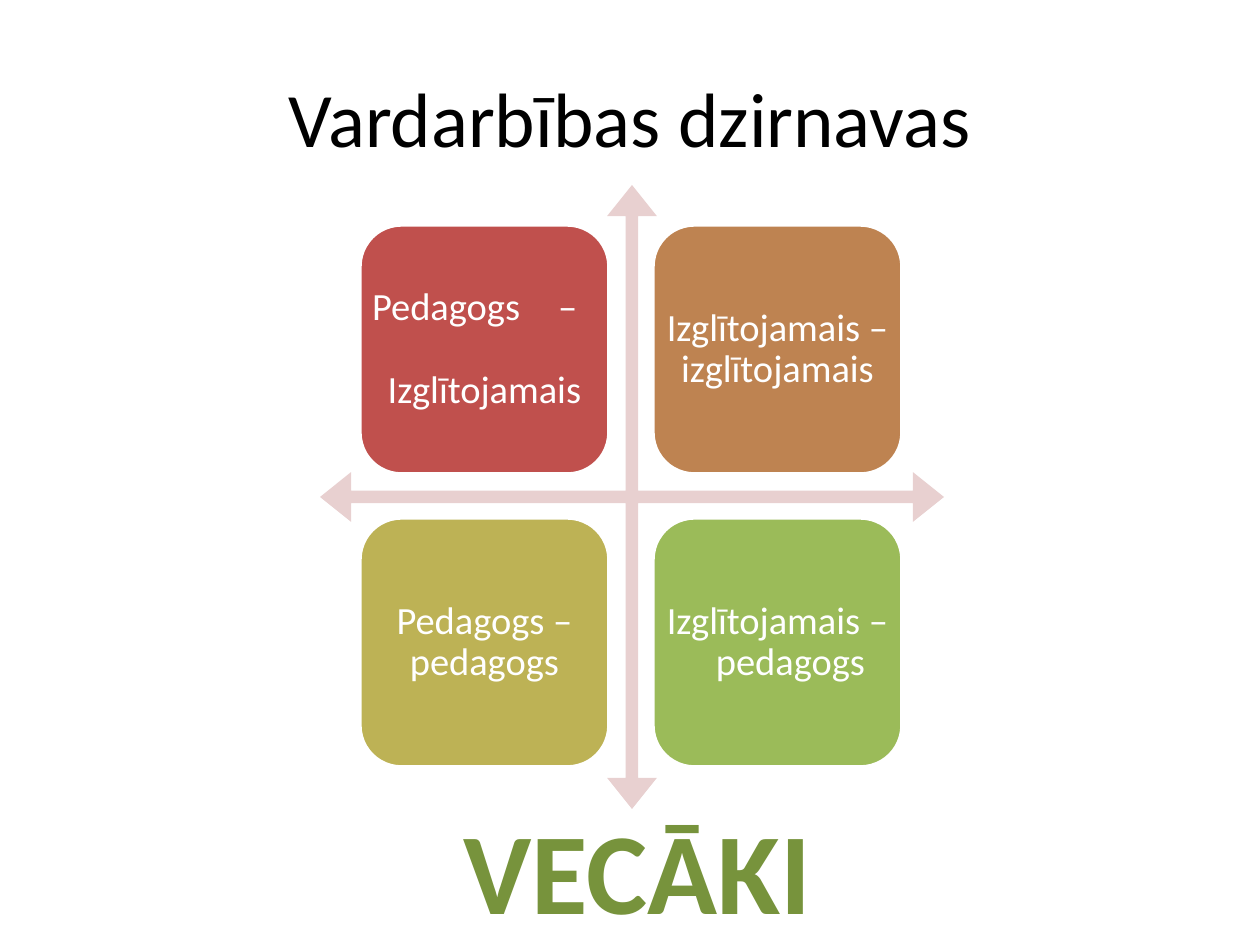
from pptx import Presentation
from pptx.dml.color import RGBColor as Rgb
from pptx.enum.shapes import MSO_SHAPE as Kind
from pptx.enum.text import MSO_ANCHOR as Anchor, MSO_AUTO_SIZE as Fit, PP_ALIGN as Align
from pptx.oxml import parse_xml
from pptx.oxml.ns import nsdecls
from pptx.util import Emu, Pt

HUES = {
    "ink": "000000", "white": "FFFFFF", "arrow": "E8D0D0",
    "red": "C0504D", "brown": "BE8351", "olive": "BDB255",
    "green": "9BBB59", "leaf": "77933C",
}
SIDE, STEP = 249, 293
LEFT, TOP = 360, 225


def px(num):
    return Emu(round(num * 914400 / 126))


def area(*nums):
    return [px(num) for num in nums]


def hue(name):
    return Rgb.from_string(HUES[name])


def style(para, size, name, align=Align.CENTER, bold=False):
    para.alignment = align
    font = para.font
    font.name, font.size, font.bold = "Calibri", Pt(size), bold
    font.color.rgb = hue(name)


def add_title(slide, text):
    title = slide.shapes.title
    title.left, title.top, title.width, title.height = area(63, 38, 1134, 158)
    title.text_frame.vertical_anchor = Anchor.MIDDLE
    title.text_frame.text = text
    style(title.text_frame.paragraphs[0], 44, "ink")


def add_cross(slide):
    cross = slide.shapes.add_shape(Kind.QUAD_ARROW, *area(320, 185, 624, 624))
    cross.shadow.inherit = False
    for i, part in enumerate((0.02, 0.04, 0.05)):
        cross.adjustments[i] = part
    cross.fill.solid()
    cross.fill.fore_color.rgb = hue("arrow")
    cross.line.fill.background()


def add_card(slide, row, col, name, lines):
    """Add one rounded square of the grid and return its paragraphs."""
    spot = area(LEFT + col * STEP, TOP + row * STEP, SIDE, SIDE)
    card = slide.shapes.add_shape(Kind.ROUNDED_RECTANGLE, *spot)
    card.shadow.inherit = False
    card.fill.solid()
    card.fill.fore_color.rgb = hue(name)
    card.line.color.rgb = hue("white")
    card.line.width = Pt(2)
    frame = card.text_frame
    frame.word_wrap = True
    frame.vertical_anchor = Anchor.MIDDLE
    frame.margin_left = frame.margin_right = 0
    frame.margin_top = frame.margin_bottom = 0
    frame.text = "\n".join(lines)
    for para in frame.paragraphs:
        para.line_spacing = 0.9
    return frame.paragraphs


def add_tab(para, pos):
    props = para._p.get_or_add_pPr()
    props.append(parse_xml(
        f'<a:tabLst {nsdecls("a")}><a:tab pos="{px(pos)}" algn="l"/></a:tabLst>'))


def add_cards(slide):
    cards = (
        ("red", ["Pedagogs\t–", "Izglītojamais"]),
        ("brown", ["Izglītojamais – izglītojamais"]),
        ("olive", ["Pedagogs – pedagogs"]),
        ("green", ["Izglītojamais –", "pedagogs"]),
    )
    for i, (name, lines) in enumerate(cards):
        paras = add_card(slide, *divmod(i, 2), name, lines)
        align = Align.CENTER
        if name == "red":
            add_tab(paras[0], 186)
            paras[1].space_before = Pt(24)
            align = Align.LEFT
        elif name == "green":
            paras[1]._p.get_or_add_pPr().set("marL", str(px(26)))
        style(paras[0], 22, "white", align)
        for para in paras[1:]:
            style(para, 22, "white")


def add_label(slide, text):
    box = slide.shapes.add_textbox(*area(451, 793, 397, 152))
    frame = box.text_frame
    frame.word_wrap = True
    frame.auto_size = Fit.SHAPE_TO_FIT_TEXT
    frame.text = text
    style(frame.paragraphs[0], 66, "leaf", Align.LEFT, True)


def main():
    deck = Presentation()
    deck.slide_width, deck.slide_height = area(1260, 945)
    slide = deck.slides.add_slide(deck.slide_layouts[5])
    add_title(slide, "Vardarbības dzirnavas")
    add_cross(slide)
    add_cards(slide)
    add_label(slide, "VECĀKI")
    deck.save("out.pptx")


if __name__ == "__main__":
    main()
